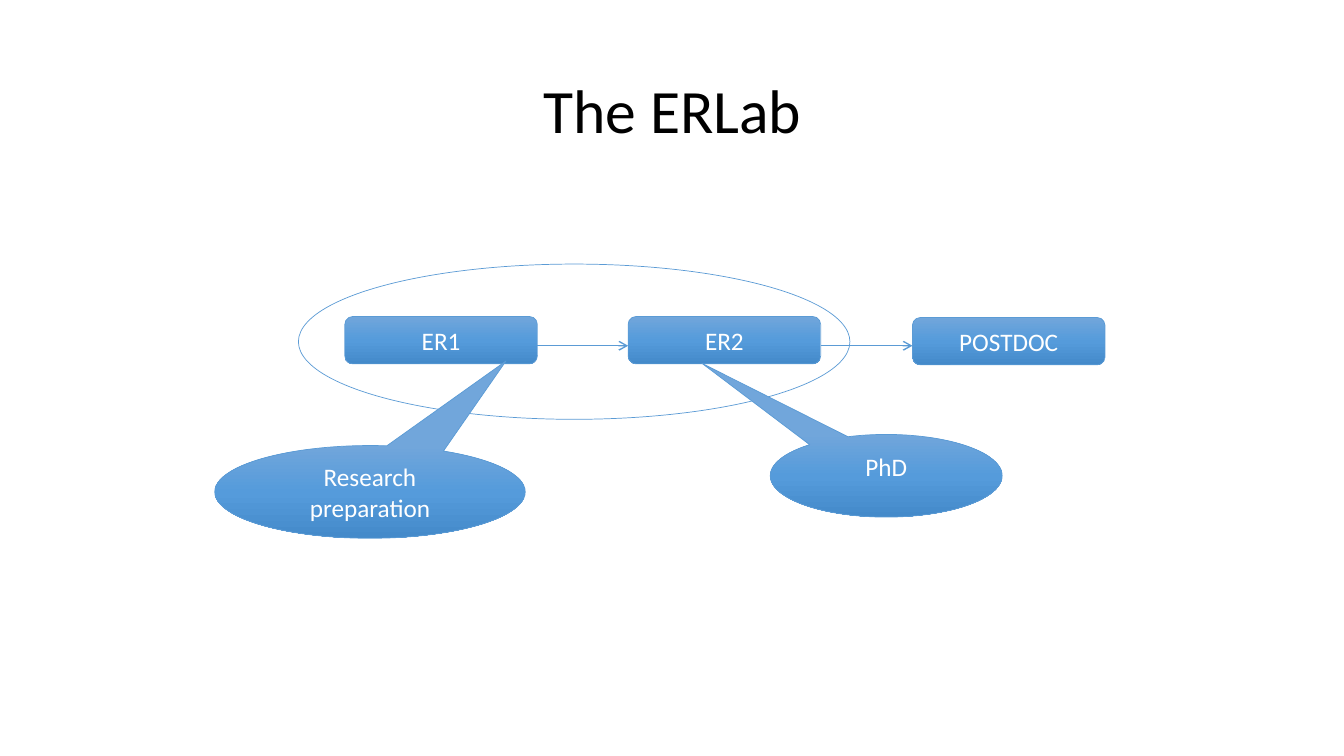
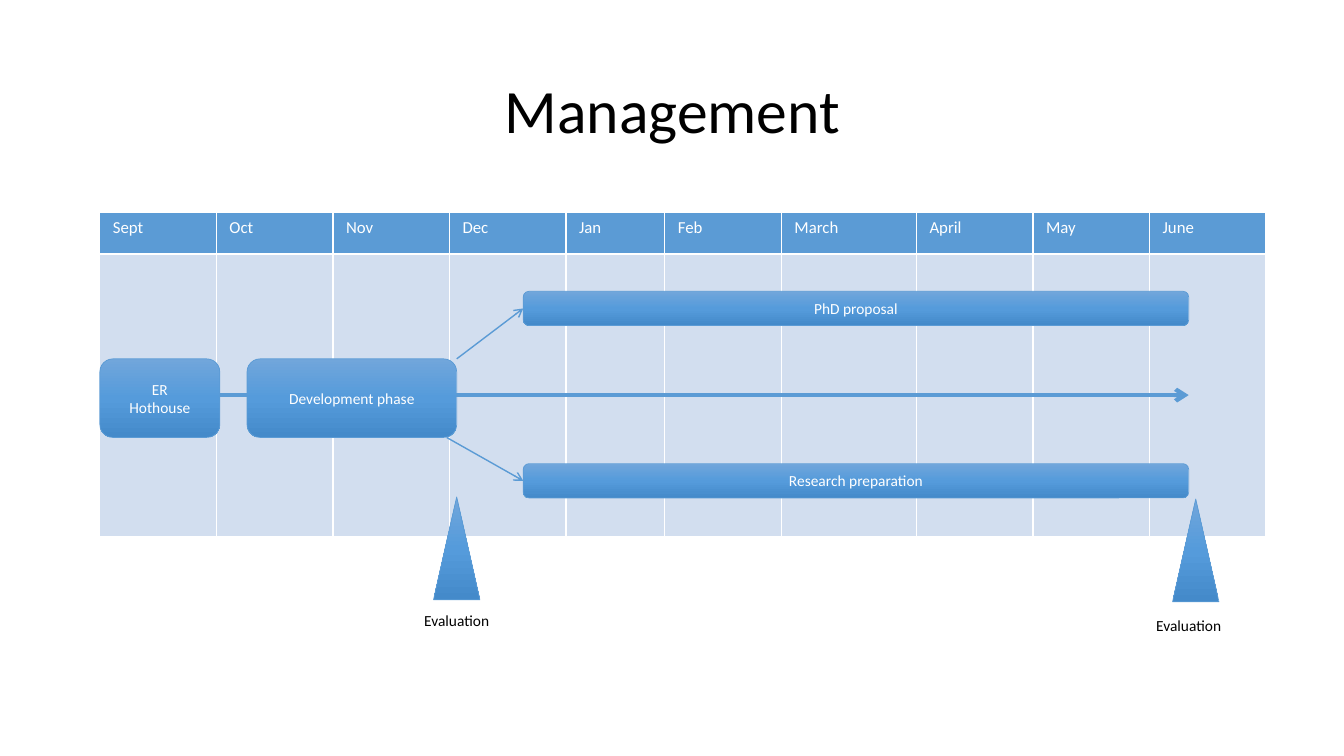
import copy

import pptx
import pptx.dml.color
import pptx.enum.shapes
import pptx.enum.text
import pptx.oxml
import pptx.oxml.ns
import pptx.util
from pptx.util import Inches

COLORS = {
    "accent": "5B9BD5",
    "band": "D2DEEF",
    "white": "FFFFFF",
    "black": "000000",
}
GRADIENT = [(0, "71A6DB"), (0.5, "559BDB"), (1, "448ACA")]
FONT = "Calibri"
SHAPES = pptx.enum.shapes.MSO_SHAPE
ANCHORS = pptx.enum.text.MSO_ANCHOR
CENTER = pptx.enum.text.PP_ALIGN.CENTER

MONTHS = ["Sept", "Oct", "Nov", "Dec", "Jan", "Feb", "March", "April", "May", "June"]
SPECIAL_WIDTHS = {"Jan": 0.98, "March": 1.34}
TABLE_LEFT, TABLE_TOP, TABLE_WIDTH = 0.99, 2.11, 11.57
ROW_HEIGHTS = [0.41, 2.8]


def rgb(name):
    """Return the colour stored under a name."""
    return pptx.dml.color.RGBColor.from_string(COLORS[name])


def lengths(*values):
    """Turn numbers of inches into lengths."""
    return [Inches(value) for value in values]


def add_xml(parent, markup):
    """Append an element of the drawing namespace."""
    namespace = pptx.oxml.ns.nsdecls("a")
    head, rest = markup.split(" ", 1)
    parent.append(pptx.oxml.parse_xml(f"{head} {namespace} {rest}"))


def style_text(frame, text, size, color, align=CENTER):
    """Fill a text frame with one evenly formatted paragraph."""
    frame.text = text
    para = frame.paragraphs[0]
    para.alignment = align
    para.font.size = pptx.util.Pt(size)
    para.font.name = FONT
    para.font.bold = False
    para.font.color.rgb = rgb(color)
    return para


def add_page(deck, title):
    """Add a slide with the shared title style."""
    page = deck.slides.add_slide(deck.slide_layouts[5])
    box = page.shapes.title
    box.left, box.top, box.width, box.height = lengths(0.92, 0.4, 11.5, 1.45)
    box.text_frame.vertical_anchor = ANCHORS.MIDDLE
    style_text(box.text_frame, title, 44, "black").line_spacing = 0.9
    return page


def fill_gradient(shape):
    """Give a shape the shared top-to-bottom gradient."""
    shape.fill.gradient()
    shape.fill.gradient_angle = 270
    stop_list = shape.element.spPr.find(".//" + pptx.oxml.ns.qn("a:gsLst"))
    stop_list.insert(1, copy.deepcopy(stop_list[0]))
    for stop, (position, color) in zip(shape.fill.gradient_stops, GRADIENT):
        stop.position = position
        stop.color.rgb = pptx.dml.color.RGBColor.from_string(color)


def add_shape(page, kind, at, text="", size=18, filled=True, anchor=ANCHORS.MIDDLE, adjust=()):
    """Add an outlined shape, with the gradient unless told otherwise."""
    shape = page.shapes.add_shape(kind, *lengths(*at))
    shape.shadow.inherit = False
    for index, value in enumerate(adjust):
        shape.adjustments[index] = value
    if filled:
        fill_gradient(shape)
    else:
        shape.fill.background()
    shape.line.color.rgb = rgb("accent")
    shape.line.width = pptx.util.Pt(0.5)
    if text:
        shape.text_frame.vertical_anchor = anchor
        style_text(shape.text_frame, text, size, "white")
    return shape


def add_arrow(page, start, end, width=1, target=None):
    """Add an arrow, joined to the left side of a target if there is one."""
    arrow = page.shapes.add_connector(
        pptx.enum.shapes.MSO_CONNECTOR.STRAIGHT, *lengths(*start, *end)
    )
    if target is not None:
        arrow.end_connect(target, 1)
    arrow.line.color.rgb = rgb("accent")
    arrow.line.width = pptx.util.Pt(width)
    properties = arrow.element.spPr
    add_xml(properties.find(pptx.oxml.ns.qn("a:ln")), '<a:tailEnd type="arrow"/>')
    add_xml(properties, "<a:effectLst />")


def add_label(page, at, text):
    """Add a small centred text box."""
    box = page.shapes.add_textbox(*lengths(*at))
    box.text_frame.word_wrap = True
    box.text_frame.vertical_anchor = ANCHORS.MIDDLE
    style_text(box.text_frame, text, 11, "black")


def style_cell(cell, fill):
    """Give a cell its margins, white borders and fill."""
    cell.margin_left = cell.margin_right = Inches(0.13)
    cell.margin_top = cell.margin_bottom = Inches(0.05)
    properties = cell._tc.get_or_add_tcPr()
    for side in "LRTB":
        add_xml(
            properties,
            f'<a:ln{side} w="12700"><a:solidFill><a:srgbClr val="{COLORS["white"]}"/>'
            f"</a:solidFill></a:ln{side}>",
        )
    cell.fill.solid()
    cell.fill.fore_color.rgb = rgb(fill)


def add_calendar(page):
    """Add the table of months with one tall empty row."""
    at = lengths(TABLE_LEFT, TABLE_TOP, TABLE_WIDTH, sum(ROW_HEIGHTS))
    table = page.shapes.add_table(len(ROW_HEIGHTS), len(MONTHS), *at).table
    remaining = TABLE_WIDTH - sum(SPECIAL_WIDTHS.values())
    month_width = remaining / (len(MONTHS) - len(SPECIAL_WIDTHS))
    for row, height in zip(table.rows, ROW_HEIGHTS):
        row.height = Inches(height)
    for index, month in enumerate(MONTHS):
        table.columns[index].width = Inches(SPECIAL_WIDTHS.get(month, month_width))
        header = table.cell(0, index)
        style_cell(header, "accent")
        style_text(header.text_frame, month, 12, "white", pptx.enum.text.PP_ALIGN.LEFT)
        style_cell(table.cell(1, index), "band")


def build_lab(deck):
    """Build the slide on the stages of the lab."""
    page = add_page(deck, "The ERLab")
    stages = [("ER1", 3.42, 3.14), ("ER2", 6.23, 3.14), ("POSTDOC", 9.05, 3.15)]
    stage_width = 1.91
    for name, left, top in stages:
        add_shape(page, SHAPES.ROUNDED_RECTANGLE, (left, top, stage_width, 0.47), name)
    for (_, left, _), (_, next_left, _) in zip(stages, stages[1:]):
        add_arrow(page, (left + stage_width, 3.43), (next_left, 3.43))
    add_shape(page, SHAPES.OVAL, (2.96, 2.62, 5.47, 1.54), filled=False)
    callout = SHAPES.OVAL_CALLOUT
    add_shape(page, callout, (7.64, 4.31, 2.3, 0.82), "PhD",
              anchor=ANCHORS.TOP, adjust=(-0.795, -1.361))
    add_shape(page, callout, (2.13, 4.42, 3.08, 0.92), "Research preparation",
              adjust=(0.438, -1.412))


def build_management(deck):
    """Build the slide with the yearly plan."""
    page = add_page(deck, "Management")
    add_calendar(page)
    add_arrow(page, (1.19, 3.92), (11.79, 3.92), width=3)
    rounded = SHAPES.ROUNDED_RECTANGLE
    for text, left, width in [("ER\vHothouse", 0.99, 1.19), ("Development phase", 2.45, 2.08)]:
        add_shape(page, rounded, (left, 3.56, width, 0.78), text, 11)
    tracks = [
        ("PhD proposal", 2.89, (4.53, 3.56)),
        ("Research preparation", 4.6, (4.43, 4.34)),
    ]
    for text, top, start in tracks:
        track = add_shape(page, rounded, (5.19, top, 6.6, 0.34), text, 11)
        add_arrow(page, start, (5.19, top + 0.17), target=track)
    evaluations = [((4.3, 4.93), (3.76, 5.97)), ((11.63, 4.95), (11.02, 6.02))]
    for marker, label in evaluations:
        add_shape(page, SHAPES.FLOWCHART_EXTRACT, (*marker, 0.46, 1.02))
        add_label(page, (*label, 1.54, 0.37), "Evaluation")


def main():
    """Build and save the deck."""
    deck = pptx.Presentation()
    deck.slide_width, deck.slide_height = lengths(13.33, 7.5)
    build_lab(deck)
    build_management(deck)
    deck.save("out.pptx")


if __name__ == "__main__":
    main()
